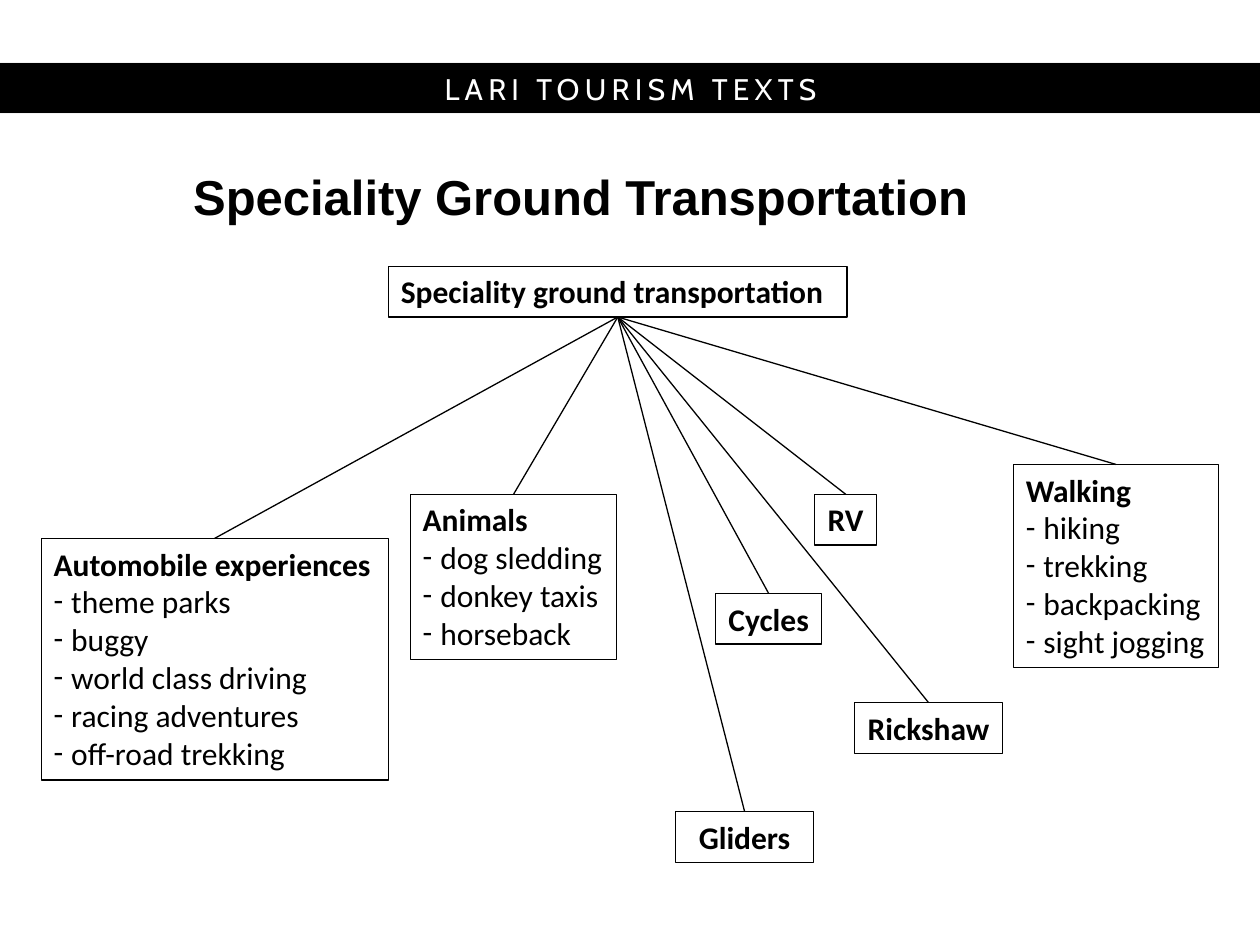
from pptx import Presentation
from pptx.dml.color import RGBColor
from pptx.enum.shapes import MSO_CONNECTOR, MSO_SHAPE
from pptx.enum.text import MSO_ANCHOR, PP_ALIGN
from pptx.util import Inches, Pt
from lxml.etree import SubElement
from pptx.oxml.ns import qn

deck = Presentation()
deck.slide_width, deck.slide_height = Inches(10), Inches(7.5)
slide = deck.slides.add_slide(deck.slide_layouts[6])
shapes = slide.shapes
col, row = deck.slide_width / 100, deck.slide_height / 100
hues = {"ink": "000000", "paper": "FFFFFF", "edge": "F2F2F2"}
fonts = {
    "band": {"name": "Cabin", "size": Pt(17), "bold": False},
    "title": {"name": "Arial", "size": Pt(28), "bold": True},
    "head": {"name": "Calibri", "size": Pt(18), "bold": True},
    "item": {"name": "Calibri", "size": Pt(18), "bold": False},
}


def style(part, kind, hue="ink"):
    for key, value in fonts[kind].items():
        setattr(part.font, key, value)
    part.font.color.rgb = RGBColor.from_string(hues[hue])


def block(left, top, width, height, fill, edge):
    box = shapes.add_shape(MSO_SHAPE.RECTANGLE, round(left * col), round(top * row),
                           round(width * col), round(height * row))
    box.shadow.inherit = False
    if fill:
        box.fill.solid()
        box.fill.fore_color.rgb = RGBColor.from_string(hues[fill])
    else:
        box.fill.background()
    box.line.color.rgb = RGBColor.from_string(hues[edge])
    box.line.width = Pt(0.75)
    return box


band = block(-0.8, 6.62, 101.7, 5.4, "ink", "edge")
band.text_frame.vertical_anchor = MSO_ANCHOR.MIDDLE
para = band.text_frame.paragraphs[0]
para.alignment = PP_ALIGN.CENTER
run = para.add_run()
run.text = "LARI TOURISM TEXTS"
style(run, "band", "paper")
run.font._element.set("spc", "300")

title = shapes.add_textbox(round(14.35 * col), round(17.73 * row),
                           round(78.7 * col), round(6.4 * row))
title.text_frame.word_wrap = True
title.text_frame.vertical_anchor = MSO_ANCHOR.MIDDLE
para = title.text_frame.paragraphs[0]
para.line_spacing = Pt(32)
run = para.add_run()
run.text = "Speciality Ground Transportation"
style(run, "title")

root = (30.83, 28.18, 36.4, None, PP_ALIGN.LEFT, ["Speciality ground transportation"])
leaves = [
    (3.27, 56.97, 27.55, None, PP_ALIGN.LEFT,
     ["Automobile experiences", "theme parks", "buggy", "world class driving",
      "racing adventures", "off-road trekking"]),
    (32.56, 52.3, 16.4, None, PP_ALIGN.LEFT,
     ["Animals", "dog sledding", "donkey taxis", "horseback"]),
    (53.62, 85.87, 10.95, None, PP_ALIGN.CENTER, ["Gliders"]),
    (56.78, 62.8, 8.45, "paper", PP_ALIGN.CENTER, ["Cycles"]),
    (67.82, 74.35, 11.75, None, PP_ALIGN.CENTER, ["Rickshaw"]),
    (64.65, 52.3, 4.93, "paper", PP_ALIGN.CENTER, ["RV"]),
    (80.43, 49.15, 16.3, None, PP_ALIGN.LEFT,
     ["Walking", "hiking", "trekking", "backpacking", "sight jogging"]),
]
pad, step = 1.33, 4.04
hub = root[0] + root[2] / 2, root[1] + pad + step

for left, top, width, *rest in leaves:
    line = shapes.add_connector(MSO_CONNECTOR.STRAIGHT, round(hub[0] * col), round(hub[1] * row),
                                round((left + width / 2) * col), round(top * row))
    line.line.color.rgb = RGBColor.from_string(hues["ink"])
    line.line.width = Pt(0.75)
    SubElement(line._element.spPr, qn("a:effectLst"))

for left, top, width, fill, align, words in [root] + leaves:
    box = block(left, top, width, pad + step * len(words), fill, "ink")
    frame = box.text_frame
    frame.vertical_anchor = MSO_ANCHOR.TOP
    frame.word_wrap = align == PP_ALIGN.LEFT
    if frame.word_wrap:
        frame.margin_right = Inches(0.05)
    for spot, word in enumerate(words):
        para = frame.add_paragraph() if spot else frame.paragraphs[0]
        para.alignment = align
        if spot:
            props = para._p.get_or_add_pPr()
            props.set("marL", str(Inches(0.14)))
            props.set("indent", str(-Inches(0.14)))
            SubElement(props, qn("a:buFont")).set("typeface", "Calibri")
            SubElement(props, qn("a:buChar")).set("char", "-")
        run = para.add_run()
        run.text = word
        style(run, "item" if spot else "head")

deck.save("out.pptx")
